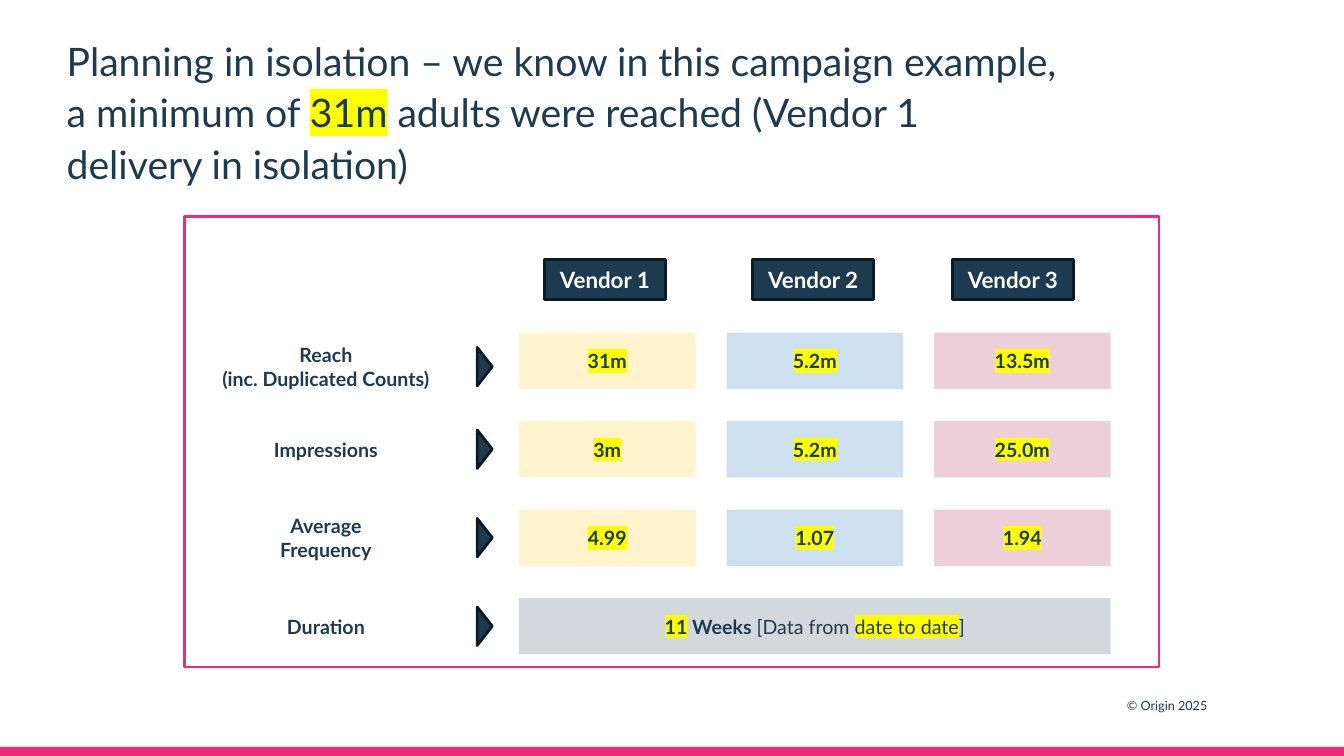
from dataclasses import dataclass

from lxml.etree import SubElement
from pptx import Presentation
from pptx.dml.color import RGBColor
from pptx.enum.shapes import MSO_SHAPE
from pptx.enum.text import MSO_ANCHOR, MSO_AUTO_SIZE, PP_ALIGN
from pptx.oxml.ns import qn
from pptx.util import Cm, Pt


@dataclass(frozen=True)
class Theme:
    font: str = "Lato"
    navy: str = "1C3B51"
    outline: str = "0C1A24"
    pink: str = "EE2A7B"
    bar: str = "ED2A7A"
    white: str = "FFFFFF"
    marker: str = "FFFF00"
    grey: str = "D2D8DC"
    columns: tuple = ("FFF4CD", "CCE0F0", "EDCFDA")
    title: int = 28
    header: int = 16
    body: int = 14
    small: int = 9


T = Theme()


def add_block(kind, box, fill=None, line=None, radius=None):
    """Add a flat shape; box is left, top, width, height in cm."""
    sp = s.shapes.add_shape(kind, *map(Cm, box))
    sp.shadow.inherit = False
    if radius is not None:
        sp.adjustments[0] = radius
    if fill:
        sp.fill.solid()
        sp.fill.fore_color.rgb = RGBColor.from_string(fill)
    else:
        sp.fill.background()
    if line:
        sp.line.color.rgb = RGBColor.from_string(line)
        sp.line.width = Pt(2)
    else:
        sp.line.fill.background()
    return sp


def write(sp, paragraphs, size, color=T.navy, align=PP_ALIGN.CENTER, anchor=MSO_ANCHOR.MIDDLE):
    """Fill a shape with paragraphs of (text, bold, highlighted) runs."""
    tf = sp.text_frame
    frame = {"word_wrap": True, "auto_size": MSO_AUTO_SIZE.NONE, "vertical_anchor": anchor}
    for name, value in frame.items():
        setattr(tf, name, value)
    for i, runs in enumerate(paragraphs):
        p = tf.add_paragraph() if i else tf.paragraphs[0]
        p.alignment = align
        for text, bold, marked in runs:
            r = p.add_run()
            r.text = text
            for name, value in {"name": T.font, "size": Pt(size), "bold": bold}.items():
                setattr(r.font, name, value)
            r.font.color.rgb = RGBColor.from_string(color)
            if marked:
                rPr = r._r.get_or_add_rPr()
                highlight = SubElement(rPr, qn("a:highlight"))
                SubElement(highlight, qn("a:srgbClr"), val=T.marker)
                rPr.find(qn("a:solidFill")).addnext(highlight)
    return tf


prs = Presentation()
prs.slide_width, prs.slide_height = Cm(33.87), Cm(19.05)
s = prs.slides.add_slide(prs.slide_layouts[5])
no_margins = dict.fromkeys(("margin_left", "margin_top", "margin_right", "margin_bottom"), 0)

# Title
title = s.shapes.title
place = {"left": Cm(1.68), "top": Cm(0.81), "width": Cm(25.02), "height": Cm(3.89)}
for name, value in place.items():
    setattr(title, name, value)
tf = write(title, [[
    ("Planning in isolation – we know in this campaign example, a minimum of ", False, False),
    ("31m", False, True),
    (" adults were reached (Vendor 1 delivery in isolation)", False, False),
]], T.title, align=PP_ALIGN.LEFT, anchor=MSO_ANCHOR.TOP)
tf.paragraphs[0].line_spacing = 1.1
for name, value in no_margins.items():
    setattr(tf, name, value)

# Footer
add_block(MSO_SHAPE.RECTANGLE, (0, 18.82, 33.87, 0.23), T.bar)
footer = s.shapes.add_textbox(Cm(28.4), Cm(17.58), Cm(2.13), Cm(0.48))
tf = write(footer, [[("© Origin 2025", False, False)]], T.small,
           align=PP_ALIGN.LEFT, anchor=MSO_ANCHOR.TOP)
tf.word_wrap = False
for name, value in no_margins.items():
    setattr(tf, name, value)

# Panel frame
add_block(MSO_SHAPE.ROUNDED_RECTANGLE, (4.65, 5.46, 24.56, 11.35), line=T.pink, radius=0)

# Vendor headers
for number, left in enumerate((13.72, 18.97, 24), 1):
    sp = add_block(MSO_SHAPE.RECTANGLE, (left, 6.53, 3.05, 1.02), T.navy, T.outline)
    write(sp, [[(f"Vendor {number}", True, False)]], T.header, T.white)

# Metric rows: label lines, values, shift of label and arrow from the row's middle
rows = [
    (("Reach", "(inc. Duplicated Counts)"), ("31m", "5.2m", "13.5m"), 0.15),
    (("Impressions",), ("3m", "5.2m", "25.0m"), 0),
    (("Average", "Frequency"), ("4.99", "1.07", "1.94"), 0),
    (("Duration",), (), 0),
]
col_left, col_step, cell_w = 13.08, 5.23, 4.45
row_top, row_step, cell_h = 8.38, 2.23, 1.42
label_h, arrow_w, arrow_h = 1.12, 0.97, 0.38

for i, (label, values, shift) in enumerate(rows):
    top = row_top + i * row_step
    middle = top + cell_h / 2 + shift
    sp = add_block(MSO_SHAPE.ROUNDED_RECTANGLE, (4.8, middle - label_h / 2, 6.83, label_h),
                   T.white, radius=0.15)
    write(sp, [[(text, True, False)] for text in label], T.body)

    arrow = add_block(MSO_SHAPE.ISOSCELES_TRIANGLE,
                      (11.73, middle - arrow_h / 2, arrow_w, arrow_h), T.navy, T.outline)
    arrow.rotation = 90

    for j, value in enumerate(values):
        sp = add_block(MSO_SHAPE.ROUNDED_RECTANGLE,
                       (col_left + j * col_step, top, cell_w, cell_h), T.columns[j], radius=0)
        write(sp, [[(value, True, True)]], T.body)

# Duration bar across all columns, in the last row
sp = add_block(MSO_SHAPE.ROUNDED_RECTANGLE,
               (col_left, top, 2 * col_step + cell_w, cell_h), T.grey, radius=0)
write(sp, [[
    ("11", True, True),
    (" Weeks ", True, False),
    ("[Data from ", False, False),
    ("date to date", False, True),
    ("]", False, False),
]], T.body)

prs.save("out.pptx")
